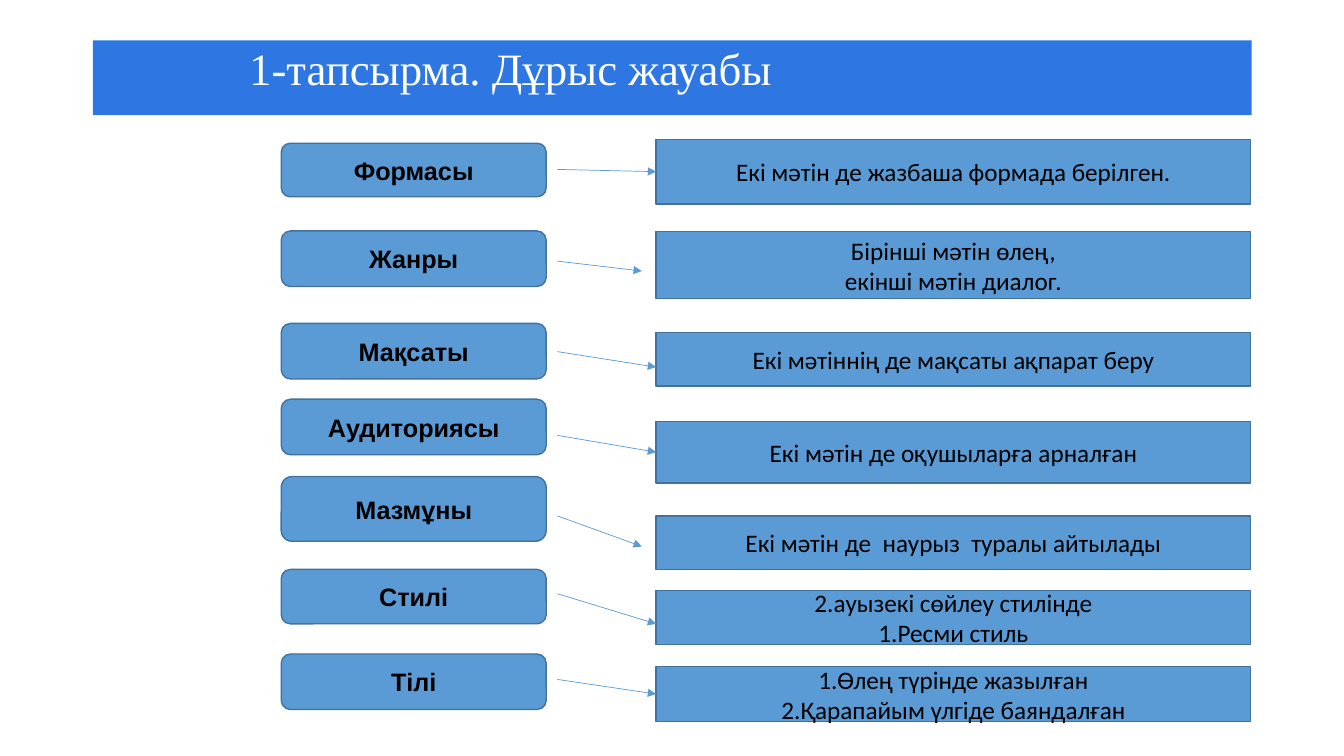
from lxml import etree
from pptx import Presentation
from pptx.dml.color import RGBColor
from pptx.enum import shapes, text
from pptx.oxml import ns
from pptx.util import Cm, Pt

COLOURS = {
    "banner": "2E77E2",
    "box": "5B9BD5",
    "outline": "41719C",
    "title": "FFFFFF",
    "text": "000000",
}

LABEL_LEFT, LABEL_WIDTH = 7.09, 6.68
ANSWER_LEFT, ANSWER_WIDTH = 16.54, 14.99
ARROW_START, ARROW_SHORT_END = 14.05, 16.18

# label, top, height; answer lines, top, height; arrow start y, arrow end
# (None: the arrow is joined to the middle of the answer's left side)
ROWS = [
    ("Формасы", 3.61, 1.35, ["Екі мәтін де жазбаша формада берілген."],
     3.51, 1.63, 4.27, None),
    ("Жанры", 5.82, 1.4, ["Бірінші мәтін өлең,", "екінші мәтін диалог."],
     5.84, 1.68, 6.58, (ARROW_SHORT_END, 6.83)),
    ("Мақсаты", 8.15, 1.4, ["Екі мәтіннің де мақсаты ақпарат беру"],
     8.38, 1.35, 8.86, (ANSWER_LEFT, 9.25)),
    ("Аудиториясы", 10.06, 1.4, ["Екі мәтін де оқушыларға арналған"],
     10.62, 1.55, 10.97, None),
    ("Мазмұны", 12.01, 1.63, ["Екі мәтін де  наурыз  туралы айтылады"],
     13, 1.35, 13, (ARROW_SHORT_END, 13.77)),
    ("Стилі", 14.35, 1.37, ["2.ауызекі сөйлеу стилінде", "1.Ресми стиль"],
     14.88, 1.37, 14.96, (ANSWER_LEFT, 15.72)),
    ("Тілі", 16.48, 1.4,
     ["1.Өлең түрінде жазылған", "2.Қарапайым үлгіде баяндалған"],
     16.79, 1.4, 17.12, None),
]


def colour(name):
    return RGBColor.from_string(COLOURS[name])


def write_text(shape, lines, font, size=18, bold=False, fill="text",
               align=text.PP_ALIGN.CENTER):
    frame = shape.text_frame
    frame.word_wrap = True
    frame.auto_size = text.MSO_AUTO_SIZE.NONE
    frame.vertical_anchor = text.MSO_ANCHOR.MIDDLE
    frame.text = "\n".join(lines)
    for paragraph in frame.paragraphs:
        paragraph.alignment = align
        paragraph.font.name = font
        paragraph.font.size = Pt(size)
        paragraph.font.bold = bold
        paragraph.font.color.rgb = colour(fill)


def add_title(slide, title_text):
    title = slide.shapes.title
    title.left, title.top = Cm(2.34), Cm(1.02)
    title.width, title.height = Cm(29.21), Cm(1.88)
    title.fill.solid()
    title.fill.fore_color.rgb = colour("banner")
    write_text(title, [title_text], "Times New Roman", size=32, fill="title",
               align=text.PP_ALIGN.LEFT)
    frame = title.text_frame
    frame.margin_left = Cm(3.94)
    frame.margin_top, frame.margin_bottom = Cm(0), Cm(0.35)
    frame.paragraphs[0].line_spacing = 0.9


def add_box(slide, kind, left, top, width, height):
    box = slide.shapes.add_shape(kind, Cm(left), Cm(top), Cm(width), Cm(height))
    box.shadow.inherit = False
    box.fill.solid()
    box.fill.fore_color.rgb = colour("box")
    box.line.color.rgb = colour("outline")
    box.line.width = Pt(1)
    return box


def add_arrow(slide, start_y, end, answer):
    """Draw an arrow to the end point, or to the answer's left side if None."""
    end_x, end_y = end or (ANSWER_LEFT, start_y)
    arrow = slide.shapes.add_connector(
        shapes.MSO_CONNECTOR.STRAIGHT,
        Cm(ARROW_START), Cm(start_y), Cm(end_x), Cm(end_y))
    if end is None:
        arrow.end_connect(answer, 1)
    arrow.line.color.rgb = colour("box")
    arrow.line.width = Pt(0.5)
    line = arrow.line._get_or_add_ln()
    etree.SubElement(line, ns.qn("a:tailEnd"), type="triangle")
    etree.SubElement(arrow._element.spPr, ns.qn("a:effectLst"))


def main():
    presentation = Presentation()
    presentation.slide_width, presentation.slide_height = Cm(33.88), Cm(19.05)
    slide = presentation.slides.add_slide(presentation.slide_layouts[5])
    add_title(slide, "1-тапсырма. Дұрыс жауабы")

    for (name, label_top, label_height, lines, answer_top, answer_height,
         arrow_y, arrow_end) in ROWS:
        label = add_box(slide, shapes.MSO_SHAPE.ROUNDED_RECTANGLE,
                        LABEL_LEFT, label_top, LABEL_WIDTH, label_height)
        write_text(label, [name], "Arial", bold=True)
        answer = add_box(slide, shapes.MSO_SHAPE.RECTANGLE,
                         ANSWER_LEFT, answer_top, ANSWER_WIDTH, answer_height)
        write_text(answer, lines, "Calibri")
        add_arrow(slide, arrow_y, arrow_end, answer)

    presentation.save("out.pptx")


if __name__ == "__main__":
    main()
